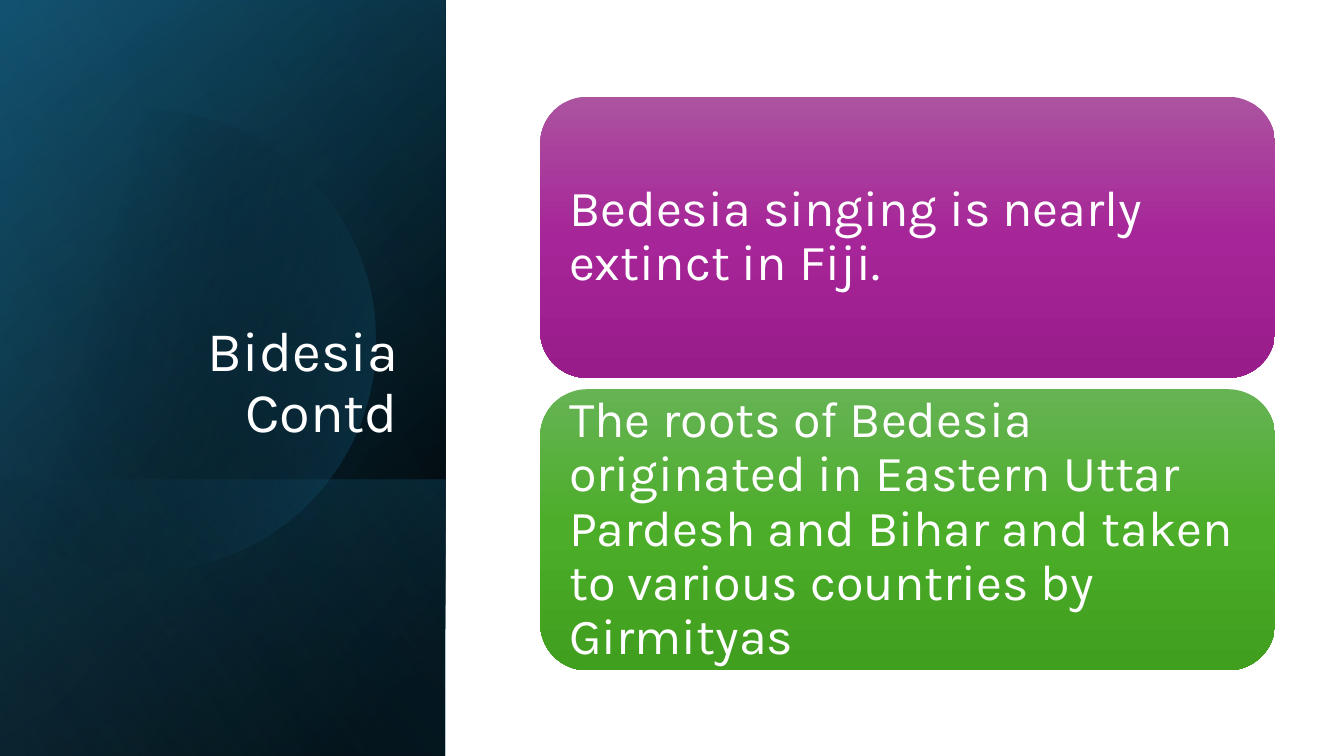
import math

from lxml import etree
from pptx import Presentation
from pptx.dml.color import RGBColor
from pptx.enum import shapes, text
from pptx.oxml.ns import qn
from pptx.util import Pt

FONT = "Karla"
WHITE = "FFFFFF"
PANEL = (0, 0, 318.24, 540)
PANEL_FOOT_HEIGHT = 197.28
CARDS = (385.92, 69.12, 524.88, 409.68)
CARD_GAP = 8.1
CARD_CONTENT = [
    ("Bedesia singing is nearly extinct in Fiji.",
     [(0, "AC53A0", 100), (50, "A62598", 100), (100, "991C8B", 100)]),
    ("The roots of Bedesia originated in Eastern Uttar Pardesh and Bihar "
     "and taken to various countries by Girmityas",
     [(0, "66B354", 100), (50, "4BAD28", 100), (100, "409F1E", 100)]),
]


def color(value):
    return RGBColor.from_string(value)


def paint_gradient(shape, stops, angle):
    """Fill with (position, colour, opacity) stops; the angle runs clockwise."""
    shape.shadow.inherit = False
    shape.line.fill.background()
    shape.fill.gradient()
    shape.fill.gradient_angle = -angle % 360
    stop_list = next(shape.element.iter(qn("a:gsLst")))
    for default_stop in list(stop_list):
        stop_list.remove(default_stop)
    for position, value, opacity in stops:
        stop = etree.SubElement(stop_list, qn("a:gs"), pos=str(position * 1000))
        rgb = etree.SubElement(stop, qn("a:srgbClr"), val=str(color(value)))
        if opacity < 100:
            etree.SubElement(rgb, qn("a:alpha"), val=str(opacity * 1000))


def add_gradient_shape(slide, kind, box, stops, angle):
    shape = slide.shapes.add_shape(kind, *map(Pt, box))
    paint_gradient(shape, stops, angle)
    return shape


def write_text(shape, words, size, alignment, anchor, inset):
    frame = shape.text_frame
    frame.text = words
    frame.word_wrap = True
    frame.auto_size = text.MSO_AUTO_SIZE.NONE
    frame.vertical_anchor = anchor
    frame.margin_left = frame.margin_right = Pt(inset)
    frame.margin_top = frame.margin_bottom = Pt(inset / 2 if inset < 10 else inset)
    paragraph = frame.paragraphs[0]
    paragraph.alignment = alignment
    paragraph.line_spacing = 0.9
    font = paragraph.runs[0].font
    font.name = FONT
    font.size = Pt(size)
    font.color.rgb = color(value=WHITE)


def add_clipped_disc(slide, box):
    """Draw a disc cut off by the left side of the box."""
    left, top, width, height = box
    radius = 165
    center_x, center_y = left + 103, top + 243.5
    limit = math.acos((left - center_x) / radius)
    steps = 120
    points = []
    for step in range(steps + 1):
        angle = limit * (2 * step / steps - 1)
        points.append((Pt(center_x + radius * math.cos(angle)),
                       Pt(center_y + radius * math.sin(angle))))
    builder = slide.shapes.build_freeform(*points[0])
    builder.add_line_segments(points[1:], close=True)
    disc = builder.convert_to_shape()
    paint_gradient(disc, [(29, "000000", 0), (100, "156082", 43)], 14)


def add_title_panel(slide, box):
    left, top, width, height = box
    rectangle = shapes.MSO_SHAPE.RECTANGLE
    foot = (left, top + height - PANEL_FOOT_HEIGHT, width, PANEL_FOOT_HEIGHT)
    layers = [
        (box, [(8, "000000", 100), (100, "104862", 100)], 220),
        (box, [(0, "000000", 0), (99, "156082", 46)], 240),
        (foot, [(2, "156082", 29), (100, "000000", 30)], 140),
    ]
    for layer_box, stops, angle in layers:
        add_gradient_shape(slide, rectangle, layer_box, stops, angle)
    add_clipped_disc(slide, box)
    add_gradient_shape(slide, rectangle, box,
                       [(0, "000000", 0), (99, "46B1E1", 11)], 150)

    title = slide.shapes.title
    title.left, title.top = Pt(left + 46.08), Pt(top + 132.48)
    title.width, title.height = Pt(245.52), Pt(188.64)
    write_text(title, "Bidesia Contd", 40, text.PP_ALIGN.RIGHT,
               text.MSO_ANCHOR.BOTTOM, 7.2)
    # The title sits above the panel layers
    slide.shapes._spTree.append(title.element)


def add_cards(slide, box):
    left, top, width, height = box
    count = len(CARD_CONTENT)
    card_height = (height - CARD_GAP * (count - 1)) / count
    for index, (words, stops) in enumerate(CARD_CONTENT):
        card_top = top + index * (card_height + CARD_GAP)
        card = add_gradient_shape(slide, shapes.MSO_SHAPE.ROUNDED_RECTANGLE,
                                  (left, card_top, width, card_height), stops, 90)
        write_text(card, words, 36, text.PP_ALIGN.LEFT,
                   text.MSO_ANCHOR.MIDDLE, 10.8)


def main():
    presentation = Presentation()
    presentation.slide_width, presentation.slide_height = Pt(960), Pt(540)
    slide = presentation.slides.add_slide(presentation.slide_layouts[5])
    add_title_panel(slide, PANEL)
    add_cards(slide, CARDS)
    presentation.save("out.pptx")


if __name__ == "__main__":
    main()
